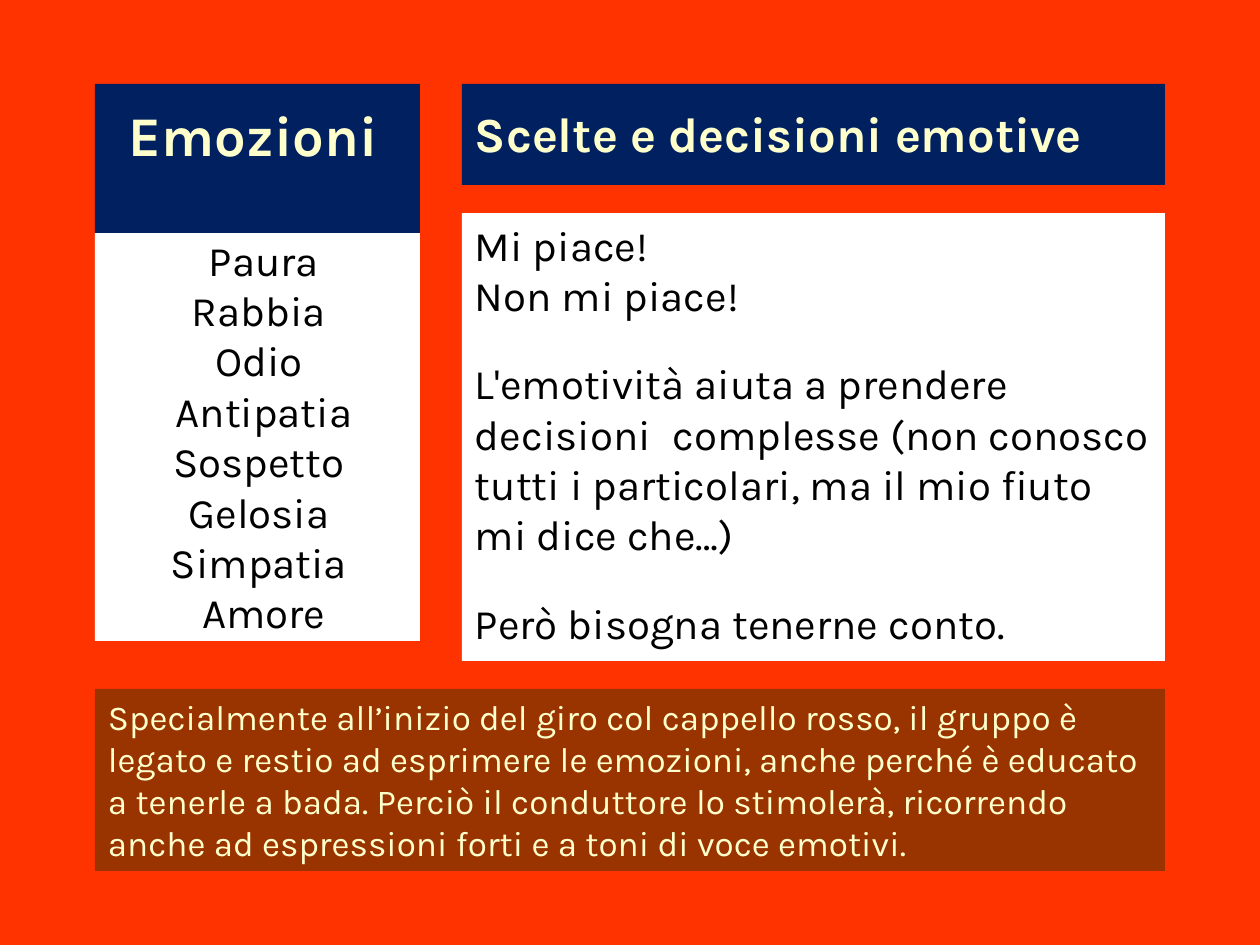
from dataclasses import dataclass

from lxml import etree
from pptx import Presentation
from pptx.dml.color import RGBColor
from pptx.enum.shapes import MSO_SHAPE
from pptx.enum.text import MSO_ANCHOR, MSO_AUTO_SIZE, PP_ALIGN
from pptx.oxml.ns import qn
from pptx.util import Pt

RECTANGLE = MSO_SHAPE.RECTANGLE
TOP = MSO_ANCHOR.TOP
NO_AUTOFIT = MSO_AUTO_SIZE.NONE
LEFT, CENTER = PP_ALIGN.LEFT, PP_ALIGN.CENTER

EMU_PER_PX = 914400 / 126
FONT = "Karla"
RED, NAVY, BROWN = "FF3300", "002060", "993300"
WHITE, BLACK, CREAM = "FFFFFF", "000000", "FFFFCC"

LEFT_COLUMN, RIGHT_COLUMN = 95, 462
LEFT_WIDTH, RIGHT_WIDTH = 325, 703
HEADER_TOP = 84
INDENT = 13
TAB_STOP = 198
PARAGRAPH_GAP = 21.6


@dataclass(frozen=True)
class Panel:
    left: int
    top: int
    width: int
    height: int
    fill: str
    color: str
    size: int
    paragraphs: tuple[str, ...]
    inset_top: int
    inset_left: int = INDENT
    bold: bool = False
    align: PP_ALIGN = LEFT
    spaced: tuple[int, ...] = ()


EMOTIONS_TITLE = Panel(
    LEFT_COLUMN, HEADER_TOP, LEFT_WIDTH, 149, NAVY, CREAM, 32,
    ("Emozioni",), inset_top=16, inset_left=34, bold=True,
)

PANELS = (
    Panel(
        LEFT_COLUMN, 233, LEFT_WIDTH, 408, WHITE, BLACK, 24,
        ("Paura\vRabbia \vOdio \vAntipatia Sospetto \vGelosia \vSimpatia \vAmore",),
        inset_top=1, align=CENTER,
    ),
    Panel(
        RIGHT_COLUMN, HEADER_TOP, RIGHT_WIDTH, 101, NAVY, CREAM, 28,
        ("Scelte e decisioni emotive",), inset_top=20, bold=True,
    ),
    Panel(
        RIGHT_COLUMN, 213, RIGHT_WIDTH, 448, WHITE, BLACK, 24,
        (
            "Mi piace!",
            "Non mi piace!",
            "L'emotività aiuta a prendere decisioni\tcomplesse (non conosco "
            "tutti i particolari, ma il mio fiuto mi dice che…)",
            "Però bisogna tenerne conto.",
        ),
        inset_top=6, spaced=(2, 3),
    ),
    Panel(
        LEFT_COLUMN, 689, 1070, 182, BROWN, CREAM, 20,
        (
            "Specialmente all’inizio del giro col cappello rosso, il gruppo è "
            "legato e restio ad esprimere le emozioni, anche perché è educato "
            "a tenerle a bada. Perciò il conduttore lo stimolerà, ricorrendo "
            "anche ad espressioni forti e a toni di voce emotivi.",
        ),
        inset_top=6,
    ),
)


def px(length: int) -> int:
    return round(length * EMU_PER_PX)


def rgb(value: str) -> RGBColor:
    return RGBColor.from_string(value)


def add_tab_stop(paragraph, position: int) -> None:
    properties = paragraph._p.get_or_add_pPr()
    stops = etree.SubElement(properties, qn("a:tabLst"))
    etree.SubElement(stops, qn("a:tab"), pos=str(px(position)), algn="l")


def write_text(frame, panel: Panel) -> None:
    frame.word_wrap = True
    frame.auto_size = NO_AUTOFIT
    frame.vertical_anchor = TOP
    frame.margin_left = px(panel.inset_left)
    frame.margin_top = px(panel.inset_top)
    frame.margin_right = 0 if panel.align == CENTER else px(INDENT)
    frame.margin_bottom = 0
    frame.text = "\n".join(panel.paragraphs)
    for index, paragraph in enumerate(frame.paragraphs):
        paragraph.alignment = panel.align
        paragraph.space_before = Pt(PARAGRAPH_GAP if index in panel.spaced else 0)
        if "\t" in panel.paragraphs[index]:
            add_tab_stop(paragraph, TAB_STOP)
        for run in paragraph.runs:
            run.font.name = FONT
            run.font.size = Pt(panel.size)
            run.font.bold = panel.bold
            run.font.color.rgb = rgb(panel.color)


def format_panel(shape, panel: Panel) -> None:
    shape.left, shape.top = px(panel.left), px(panel.top)
    shape.width, shape.height = px(panel.width), px(panel.height)
    shape.fill.solid()
    shape.fill.fore_color.rgb = rgb(panel.fill)
    shape.line.fill.background()
    shape.shadow.inherit = False
    write_text(shape.text_frame, panel)


def main() -> None:
    presentation = Presentation()
    presentation.slide_width = px(1260)
    presentation.slide_height = px(945)
    slide = presentation.slides.add_slide(presentation.slide_layouts[5])
    slide.background.fill.solid()
    slide.background.fill.fore_color.rgb = rgb(RED)

    format_panel(slide.shapes.title, EMOTIONS_TITLE)
    for panel in PANELS:
        format_panel(slide.shapes.add_shape(RECTANGLE, 0, 0, 0, 0), panel)

    presentation.save("out.pptx")


if __name__ == "__main__":
    main()
